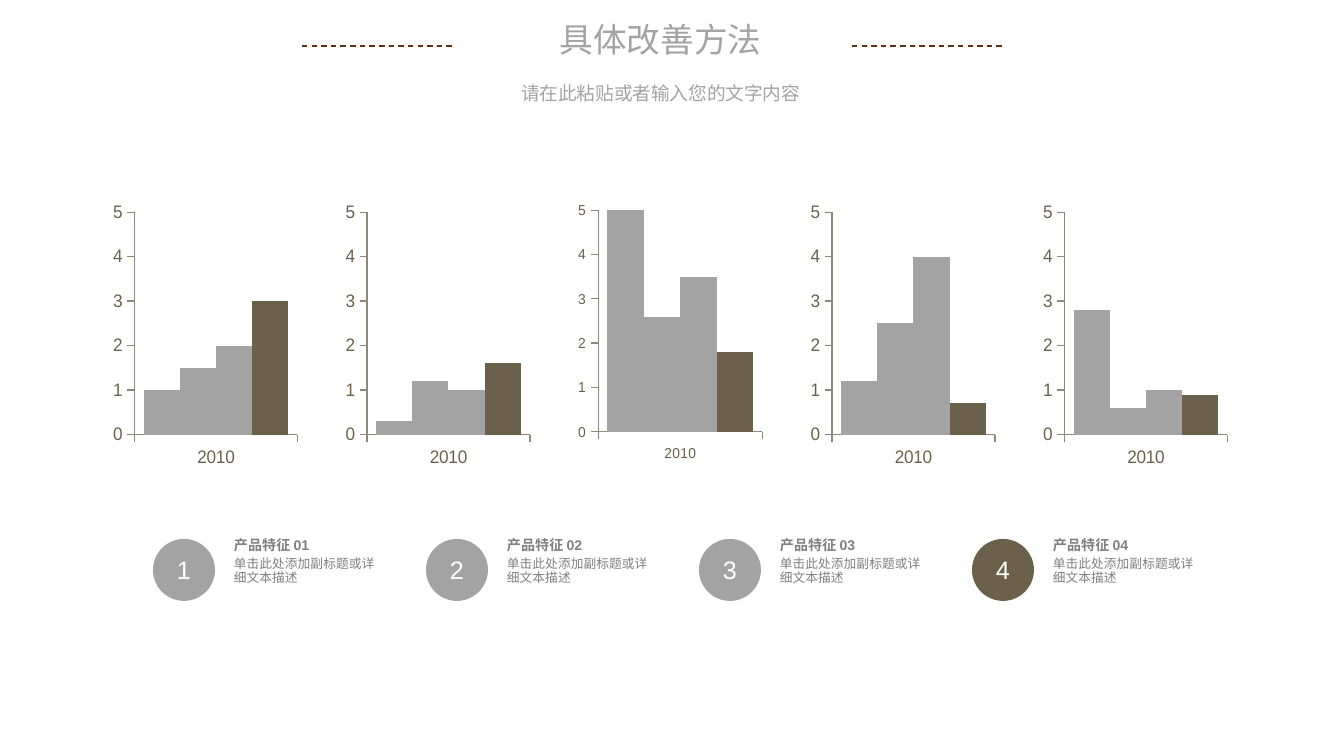
"""Build the improvement-methods slide: five small column charts above four numbered features."""
from dataclasses import dataclass

from lxml import etree
from pptx import Presentation
from pptx.chart.data import CategoryChartData
from pptx.dml.color import RGBColor
from pptx.enum.chart import XL_CHART_TYPE, XL_TICK_MARK
from pptx.enum.dml import MSO_LINE
from pptx.enum.shapes import MSO_CONNECTOR, MSO_SHAPE
from pptx.enum.text import MSO_ANCHOR, MSO_AUTO_SIZE, PP_ALIGN
from pptx.oxml import parse_xml
from pptx.oxml.ns import qn
from pptx.util import Pt

COLUMNS = XL_CHART_TYPE.COLUMN_CLUSTERED
TICK_OUT = XL_TICK_MARK.OUTSIDE
DASH = MSO_LINE.DASH
STRAIGHT = MSO_CONNECTOR.STRAIGHT
ELLIPSE = MSO_SHAPE.OVAL
TOP, MIDDLE = MSO_ANCHOR.TOP, MSO_ANCHOR.MIDDLE
FIXED = MSO_AUTO_SIZE.NONE
LEFT, CENTER = PP_ALIGN.LEFT, PP_ALIGN.CENTER

TITLE = "具体改善方法"
SUBTITLE = "请在此粘贴或者输入您的文字内容"
YEAR = "2010"
CHART_VALUES = [
    (1, 1.5, 2, 3),
    (0.3, 1.2, 1, 1.6),
    (5, 2.6, 3.5, 1.8),
    (1.2, 2.5, 4, 0.7),
    (2.8, 0.6, 1, 0.9),
]
FEATURES = [
    ("产品特征 01", "单击此处添加副标题或详细文本描述"),
    ("产品特征 02", "单击此处添加副标题或详细文本描述"),
    ("产品特征 03", "单击此处添加副标题或详细文本描述"),
    ("产品特征 04", "单击此处添加副标题或详细文本描述"),
]


@dataclass(frozen=True)
class Theme:
    font: str = "Arial"
    gray: str = "A3A3A3"
    accent: str = "6B614B"
    chart_text: str = "6B614A"
    axis: str = "8F8878"
    rule: str = "633017"
    feature_text: str = "7F7F7F"
    white: str = "FFFFFF"
    title_size: float = 18
    subtitle_size: float = 10
    chart_size: float = 10
    middle_chart_size: float = 8
    heading_size: float = 7.5
    detail_size: float = 6.8
    number_size: float = 13.5


THEME = Theme()
EMU_PER_PX = 914400 / 134.4
SLIDE_SIZE = (1344, 756)
TITLE_BOX = (512, 12, 297, 54)
SUBTITLE_BOX = (247, 70, 827, 38)
RULE_LEFTS, RULE_TOP, RULE_WIDTH = (302, 852), 46, 150
CHART_LEFT, CHART_TOP, CHART_SPAN = 113, 202, 930
CHART_SIZE = (188, 266)
FEATURE_LEFT, FEATURE_STEP = 153, 273
BADGE_TOP, BADGE_SIZE = 539, 62
TEXT_OFFSET, TEXT_WIDTH = 81, 145
HEADING_TOP, HEADING_HEIGHT = 538, 35
DETAIL_TOP, DETAIL_HEIGHT = 558, 42


def px(*lengths):
    return [round(length * EMU_PER_PX) for length in lengths]


def rgb(color):
    return RGBColor.from_string(color)


def style_font(font, size, color, bold=False):
    font.name, font.size, font.bold = THEME.font, Pt(size), bold
    font.color.rgb = rgb(color)


def write(shape, text, size, color, align=CENTER, anchor=TOP, bold=False,
          spacing=1.0, before=0, insets=(13, 7)):
    frame = shape.text_frame
    frame.text = text
    frame.word_wrap, frame.auto_size, frame.vertical_anchor = True, FIXED, anchor
    side, edge = px(*insets)
    frame.margin_left = frame.margin_right = side
    frame.margin_top = frame.margin_bottom = edge
    paragraph = frame.paragraphs[0]
    paragraph.alignment, paragraph.line_spacing = align, spacing
    paragraph.space_before = Pt(before)
    style_font(paragraph.runs[0].font, size, color, bold)


def place(shape, box):
    shape.left, shape.top, shape.width, shape.height = px(*box)


def add_rule(slide, left):
    ends = px(left, RULE_TOP, left + RULE_WIDTH, RULE_TOP)
    rule = slide.shapes.add_connector(STRAIGHT, *ends)
    rule.line.color.rgb = rgb(THEME.rule)
    rule.line.width, rule.line.dash_style = Pt(0.75), DASH
    etree.SubElement(rule._element.spPr, qn("a:effectLst"))


def set_plot_layout(chart, top):
    plot_area = chart._chartSpace.chart.plotArea
    for layout in plot_area.findall(qn("c:layout")):
        plot_area.remove(layout)
    places = "".join(f'<c:{tag} val="{value}"/>' for tag, value in (
        ("layoutTarget", "inner"), ("xMode", "edge"), ("yMode", "edge"),
        ("x", 0.04), ("y", top), ("w", 0.94), ("h", 0.86)))
    plot_area.insert(0, parse_xml(
        '<c:layout xmlns:c="http://schemas.openxmlformats.org/drawingml/2006/chart">'
        f"<c:manualLayout>{places}</c:manualLayout></c:layout>"))


def add_columns(slide, index, values):
    is_middle = index == len(CHART_VALUES) // 2
    data = CategoryChartData()
    data.categories = [YEAR]
    for number, value in enumerate(values, 1):
        data.add_series(f"Series {number}", [value])
    left = CHART_LEFT + CHART_SPAN * index / (len(CHART_VALUES) - 1)
    box = px(left, CHART_TOP, *CHART_SIZE)
    chart = slide.shapes.add_chart(COLUMNS, *box, data).chart
    chart.has_title = chart.has_legend = False
    size = THEME.middle_chart_size if is_middle else THEME.chart_size
    style_font(chart.font, size, THEME.chart_text)
    plot = chart.plots[0]
    plot.gap_width, plot.overlap, plot.vary_by_categories = 50, 0, False
    colors = [THEME.gray] * (len(values) - 1) + [THEME.accent]
    for series, color in zip(plot.series, colors):
        series.format.fill.solid()
        series.format.fill.fore_color.rgb = rgb(color)
    for axis in (chart.category_axis, chart.value_axis):
        axis.major_tick_mark = TICK_OUT
        axis.has_major_gridlines = False
        axis.format.line.color.rgb = rgb(THEME.axis)
        axis.format.line.width = Pt(0.75)
    scale = chart.value_axis
    scale.minimum_scale, scale.maximum_scale, scale.major_unit = 0, 5, 1
    set_plot_layout(chart, 0 if is_middle else 0.03)


def add_feature(slide, index, heading, detail):
    left = FEATURE_LEFT + FEATURE_STEP * index
    for text, top, height, size, bold in (
            (detail, DETAIL_TOP, DETAIL_HEIGHT, THEME.detail_size, False),
            (heading, HEADING_TOP, HEADING_HEIGHT, THEME.heading_size, True)):
        box = px(left + TEXT_OFFSET, top, TEXT_WIDTH, height)
        write(slide.shapes.add_textbox(*box), text, size, THEME.feature_text,
              align=LEFT, bold=bold, spacing=0.9, before=7.5, insets=(0, 0))
    badge = slide.shapes.add_shape(
        ELLIPSE, *px(left, BADGE_TOP, BADGE_SIZE, BADGE_SIZE))
    badge.shadow.inherit = False
    badge.fill.solid()
    is_last = index == len(FEATURES) - 1
    badge.fill.fore_color.rgb = rgb(THEME.accent if is_last else THEME.gray)
    badge.line.fill.background()
    write(badge, str(index + 1), THEME.number_size, THEME.white,
          anchor=MIDDLE, insets=(9, 5))


def main():
    deck = Presentation()
    deck.slide_width, deck.slide_height = px(*SLIDE_SIZE)
    slide = deck.slides.add_slide(deck.slide_layouts[0])
    title, subtitle = slide.placeholders
    place(title, TITLE_BOX)
    write(title, TITLE, THEME.title_size, THEME.gray)
    place(subtitle, SUBTITLE_BOX)
    write(subtitle, SUBTITLE, THEME.subtitle_size, THEME.gray, spacing=1.2)
    for left in RULE_LEFTS:
        add_rule(slide, left)
    for index, values in enumerate(CHART_VALUES):
        add_columns(slide, index, values)
    for index, (heading, detail) in enumerate(FEATURES):
        add_feature(slide, index, heading, detail)
    deck.save("out.pptx")


if __name__ == "__main__":
    main()
